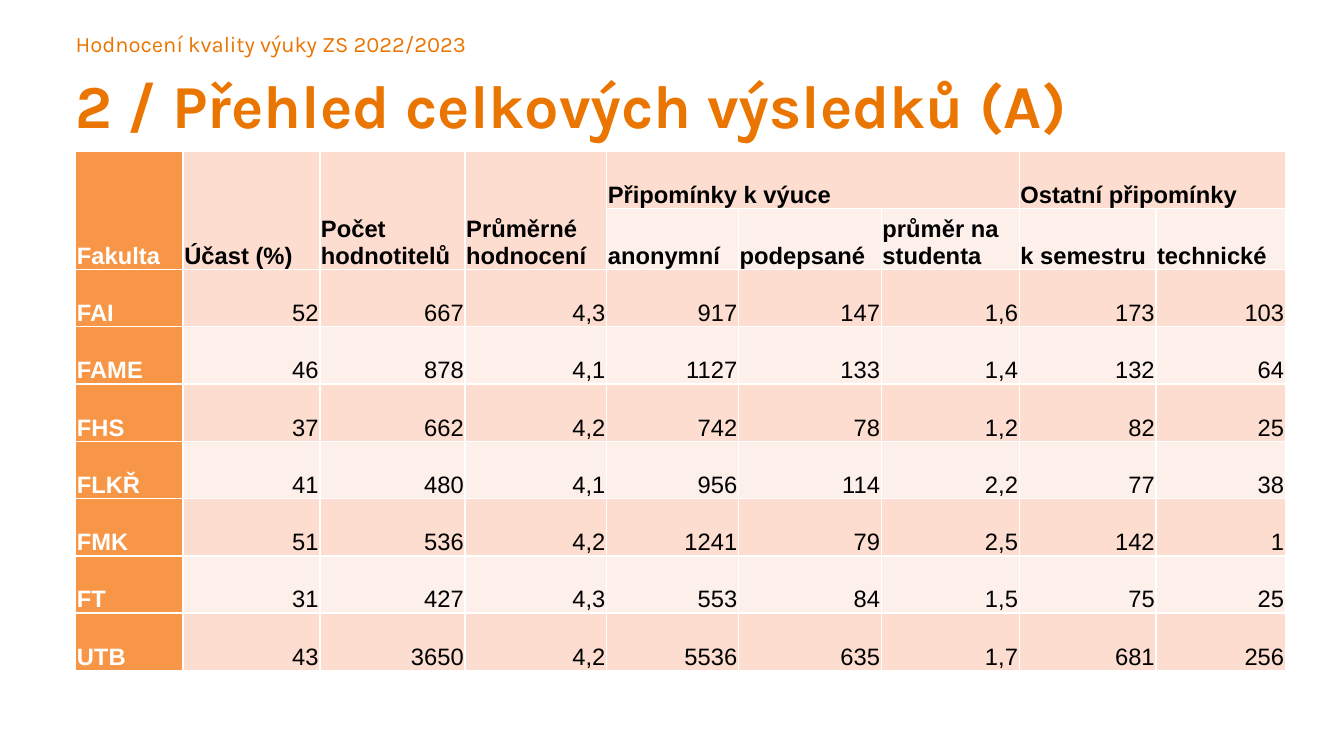
from dataclasses import dataclass
from pptx import Presentation
from pptx.dml.color import RGBColor
from pptx.enum.text import MSO_ANCHOR as Anchor, MSO_AUTO_SIZE as AutoSize, PP_ALIGN as Align
from pptx.oxml.ns import qn
from pptx.util import Emu, Inches, Pt
from lxml.etree import SubElement


@dataclass(frozen=True)
class Theme:
    heading_font: str = "Karla"
    table_font: str = "Arial"
    heading: str = "EA7500"
    accent: str = "F79646"
    bands: tuple = ("FCDDCF", "FDEFE9")
    ink: str = "000000"
    paper: str = "FFFFFF"
    title_size: float = 36
    label_size: float = 13
    table_size: float = 14
    rule_width: float = 1
    cell_inset: float = 0.01


class Deck:
    def __init__(self, theme, width, height):
        self.theme = theme
        self.show = Presentation()
        self.show.slide_width, self.show.slide_height = Inches(width), Inches(height)
        self.slide = self.show.slides.add_slide(self.show.slide_layouts[5])

    def place(self, left, top, width, height):
        sides = (self.show.slide_width, self.show.slide_height) * 2
        return [Emu(round(side * percent / 100))
                for side, percent in zip(sides, (left, top, width, height))]

    def add_words(self, frame, words, font, size, color, bold=False, align=Align.LEFT):
        paragraph = frame.paragraphs[0]
        paragraph.alignment = align
        run = paragraph.add_run()
        run.text = words
        run.font.name, run.font.size, run.font.bold = font, Pt(size), bold
        run.font.color.rgb = RGBColor.from_string(color)

    def heading(self, holder, words, size, bold=False):
        frame = holder.text_frame
        frame.margin_left = frame.margin_right = frame.margin_top = frame.margin_bottom = 0
        frame.word_wrap = True
        frame.auto_size = AutoSize.SHAPE_TO_FIT_TEXT
        frame.vertical_anchor = Anchor.TOP
        self.add_words(frame, words, self.theme.heading_font, size, self.theme.heading, bold)

    def label(self, words, *area):
        self.heading(self.slide.shapes.add_textbox(*self.place(*area)), words, self.theme.label_size)

    def title(self, words, *area):
        title = self.slide.shapes.title
        title.left, title.top, title.width, title.height = self.place(*area)
        self.heading(title, words, self.theme.title_size, True)

    def rule_off(self, cell):
        properties = cell._tc.get_or_add_tcPr()
        for side in ("lnL", "lnR", "lnT", "lnB"):
            line = SubElement(properties, qn(f"a:{side}"), w=str(Pt(self.theme.rule_width)))
            SubElement(SubElement(line, qn("a:solidFill")), qn("a:srgbClr"), val=self.theme.paper)

    def style_cell(self, cell, fill):
        cell.margin_left = cell.margin_right = cell.margin_top = Inches(self.theme.cell_inset)
        cell.margin_bottom = 0
        cell.vertical_anchor = Anchor.BOTTOM
        self.rule_off(cell)
        cell.fill.solid()
        cell.fill.fore_color.rgb = RGBColor.from_string(fill)

    def table(self, rows, merges, header_rows, column_shares, row_shares, *area):
        theme = self.theme
        left, top, width, height = self.place(*area)
        grid = self.slide.shapes.add_table(
            len(rows), len(column_shares), left, top, width, height).table
        grid.first_row = grid.horz_banding = False
        for column, share in zip(grid.columns, column_shares):
            column.width = Emu(round(width * share / sum(column_shares)))
        for row, share in zip(grid.rows, row_shares):
            row.height = Emu(round(height * share / sum(row_shares)))
        for start, end in merges:
            grid.cell(*start).merge(grid.cell(*end))
        for r, row in enumerate(rows):
            for c, words in enumerate(row):
                cell = grid.cell(r, c)
                is_header, is_faculty = r < header_rows, c == 0
                self.style_cell(cell, theme.accent if is_faculty else theme.bands[r % 2])
                if words:
                    self.add_words(cell.text_frame, words, theme.table_font, theme.table_size,
                                   theme.paper if is_faculty else theme.ink,
                                   is_header or is_faculty,
                                   Align.LEFT if is_header or is_faculty else Align.RIGHT)


HEADERS = [
    ["Fakulta", "Účast (%)", "Počet hodnotitelů", "Průměrné hodnocení",
     "Připomínky k výuce", "", "", "Ostatní připomínky", ""],
    ["", "", "", "", "anonymní", "podepsané", "průměr na studenta", "k semestru", "technické"],
]
FACULTIES = [line.split() for line in (
    "FAI 52 667 4,3 917 147 1,6 173 103",
    "FAME 46 878 4,1 1127 133 1,4 132 64",
    "FHS 37 662 4,2 742 78 1,2 82 25",
    "FLKŘ 41 480 4,1 956 114 2,2 77 38",
    "FMK 51 536 4,2 1241 79 2,5 142 1",
    "FT 31 427 4,3 553 84 1,5 75 25",
    "UTB 43 3650 4,2 5536 635 1,7 681 256",
)]
MERGES = [((0, c), (1, c)) for c in range(4)] + [((0, 4), (0, 6)), ((0, 7), (0, 8))]
COLUMN_SHARES = [88, 112, 119, 116, 108, 117, 113, 112, 106]
ROW_SHARES = [47, 50] + [47] * len(FACULTIES)
MARGIN, CONTENT = 5.63, 90.02


def main():
    deck = Deck(Theme(), 11.02, 6.2)
    deck.label("Hodnocení kvality výuky ZS 2022/2023", MARGIN, 4.03, CONTENT, 3.55)
    deck.title("2 / Přehled celkových výsledků (A)", MARGIN, 8.87, 80.22, 9.84)
    deck.table(HEADERS + FACULTIES, MERGES, len(HEADERS), COLUMN_SHARES, ROW_SHARES,
               MARGIN, 20, CONTENT, 68.71)
    deck.show.save("out.pptx")


if __name__ == "__main__":
    main()
